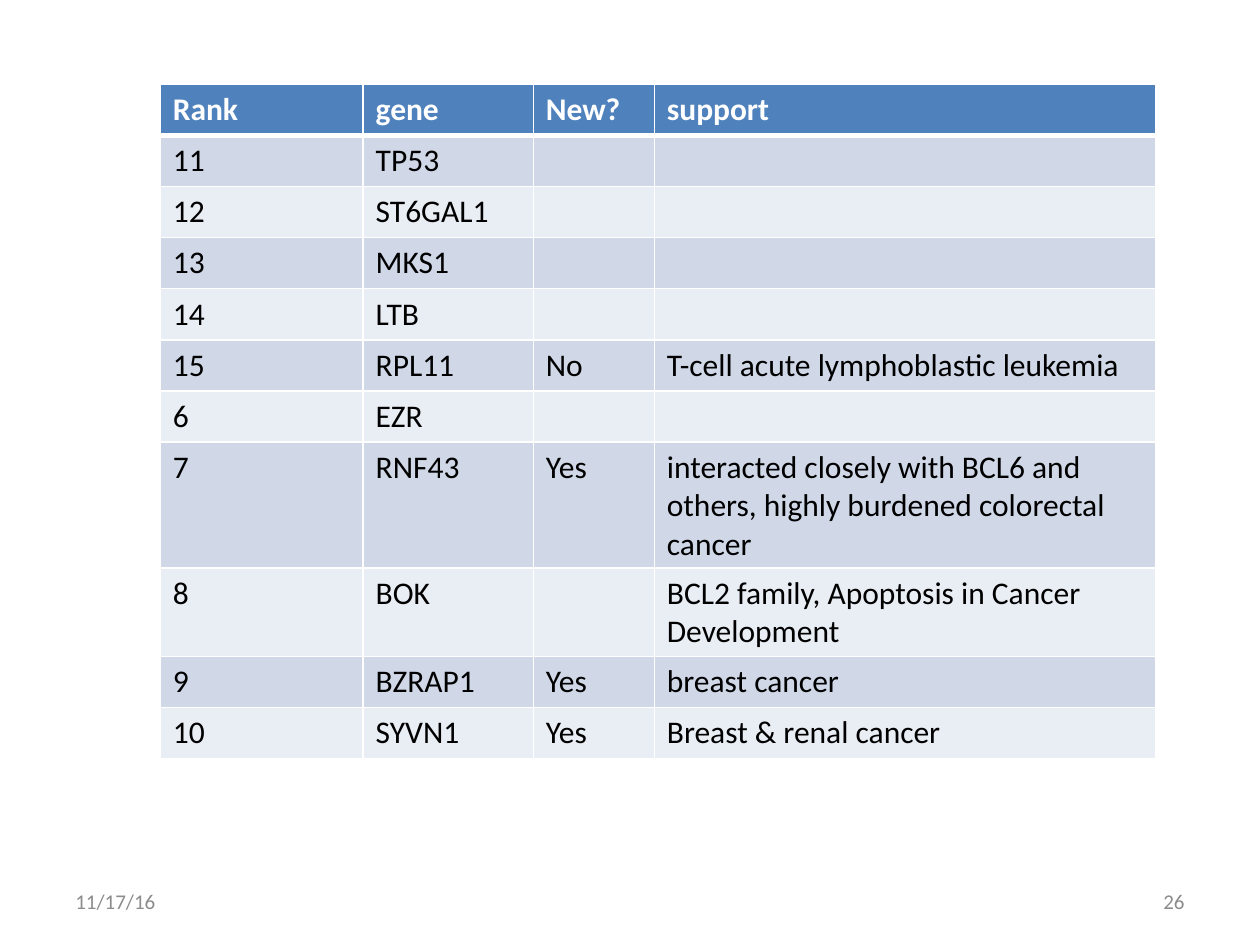
from dataclasses import dataclass
from typing import NamedTuple

from lxml import etree
from pptx import Presentation
from pptx.dml.color import RGBColor
from pptx.enum.text import MSO_ANCHOR, PP_ALIGN
from pptx.oxml.ns import qn
from pptx.util import Cm, Pt

MIDDLE = MSO_ANCHOR.MIDDLE
LEFT = PP_ALIGN.LEFT
RIGHT = PP_ALIGN.RIGHT


@dataclass(frozen=True)
class Theme:
    font: str = "Calibri"
    table_size: int = 18
    footer_size: int = 12
    header_fill: str = "4F81BD"
    band_fills: tuple[str, str] = ("D0D8E8", "E9EDF4")
    header_text: str = "FFFFFF"
    body_text: str = "000000"
    footer_text: str = "8C8C8C"
    border: str = "FFFFFF"
    thin: int = 1
    thick: int = 3


class Gene(NamedTuple):
    rank: str
    gene: str
    new: str = ""
    support: str = ""


class Footer(NamedTuple):
    text: str
    left: float
    align: PP_ALIGN


THEME = Theme()
COLUMN_WIDTHS = (4.09, 3.43, 2.44, 10.11)
ROW_HEIGHT = 1.03
HEADER = Gene("Rank", "gene", "New?", "support")
GENES = (
    Gene("11", "TP53"),
    Gene("12", "ST6GAL1"),
    Gene("13", "MKS1"),
    Gene("14", "LTB"),
    Gene("15", "RPL11", "No", "T-cell acute lymphoblastic leukemia"),
    Gene("6", "EZR"),
    Gene("7", "RNF43", "Yes",
         "interacted closely with BCL6 and others, highly burdened colorectal cancer"),
    Gene("8", "BOK", "", "BCL2 family, Apoptosis in Cancer Development"),
    Gene("9", "BZRAP1", "Yes", "breast cancer"),
    Gene("10", "SYVN1", "Yes", "Breast & renal cancer"),
)
FOOTERS = (Footer("11/17/16", 1.27, LEFT), Footer("26", 18.21, RIGHT))


def style_font(font, size: int, color: str, bold: bool = False) -> None:
    font.name = THEME.font
    font.size = Pt(size)
    font.bold = bold
    font.color.rgb = RGBColor.from_string(color)


def set_borders(cell, top: int, bottom: int) -> None:
    properties = cell._tc.get_or_add_tcPr()
    widths = {"a:lnL": THEME.thin, "a:lnR": THEME.thin, "a:lnT": top, "a:lnB": bottom}
    for tag, width in widths.items():
        line = etree.SubElement(properties, qn(tag), w=str(Pt(width)))
        fill = etree.SubElement(line, qn("a:solidFill"))
        etree.SubElement(fill, qn("a:srgbClr"), val=THEME.border)


def add_gene_table(slide) -> None:
    rows = (HEADER, *GENES)
    frame = slide.shapes.add_table(
        len(rows), len(COLUMN_WIDTHS), Cm(3.23), Cm(1.7),
        Cm(sum(COLUMN_WIDTHS)), Cm(ROW_HEIGHT * len(rows)))
    table = frame.table
    for column, width in zip(table.columns, COLUMN_WIDTHS):
        column.width = Cm(width)
    for index, record in enumerate(rows):
        table.rows[index].height = Cm(ROW_HEIGHT)
        is_header = index == 0
        fill = THEME.header_fill if is_header else THEME.band_fills[(index - 1) % 2]
        color = THEME.header_text if is_header else THEME.body_text
        top = THEME.thick if index == 1 else THEME.thin
        bottom = THEME.thick if is_header else THEME.thin
        for cell, text in zip(table.rows[index].cells, record):
            set_borders(cell, top, bottom)
            cell.fill.solid()
            cell.fill.fore_color.rgb = RGBColor.from_string(fill)
            para = cell.text_frame.paragraphs[0]
            para.text = text
            style_font(para.font, THEME.table_size, color, is_header)
            for span in para.runs:
                style_font(span.font, THEME.table_size, color, is_header)


def add_footer(slide, footer: Footer) -> None:
    box = slide.shapes.add_textbox(Cm(footer.left), Cm(17.65), Cm(5.92), Cm(1.02))
    box.text_frame.word_wrap = True
    box.text_frame.vertical_anchor = MIDDLE
    para = box.text_frame.paragraphs[0]
    para.text = footer.text
    para.alignment = footer.align
    style_font(para.runs[0].font, THEME.footer_size, THEME.footer_text)


def main() -> None:
    deck = Presentation()
    deck.slide_width = Cm(25.4)
    deck.slide_height = Cm(19.05)
    page = deck.slides.add_slide(deck.slide_layouts[6])
    for footer in FOOTERS:
        add_footer(page, footer)
    add_gene_table(page)
    deck.save("out.pptx")


if __name__ == "__main__":
    main()
